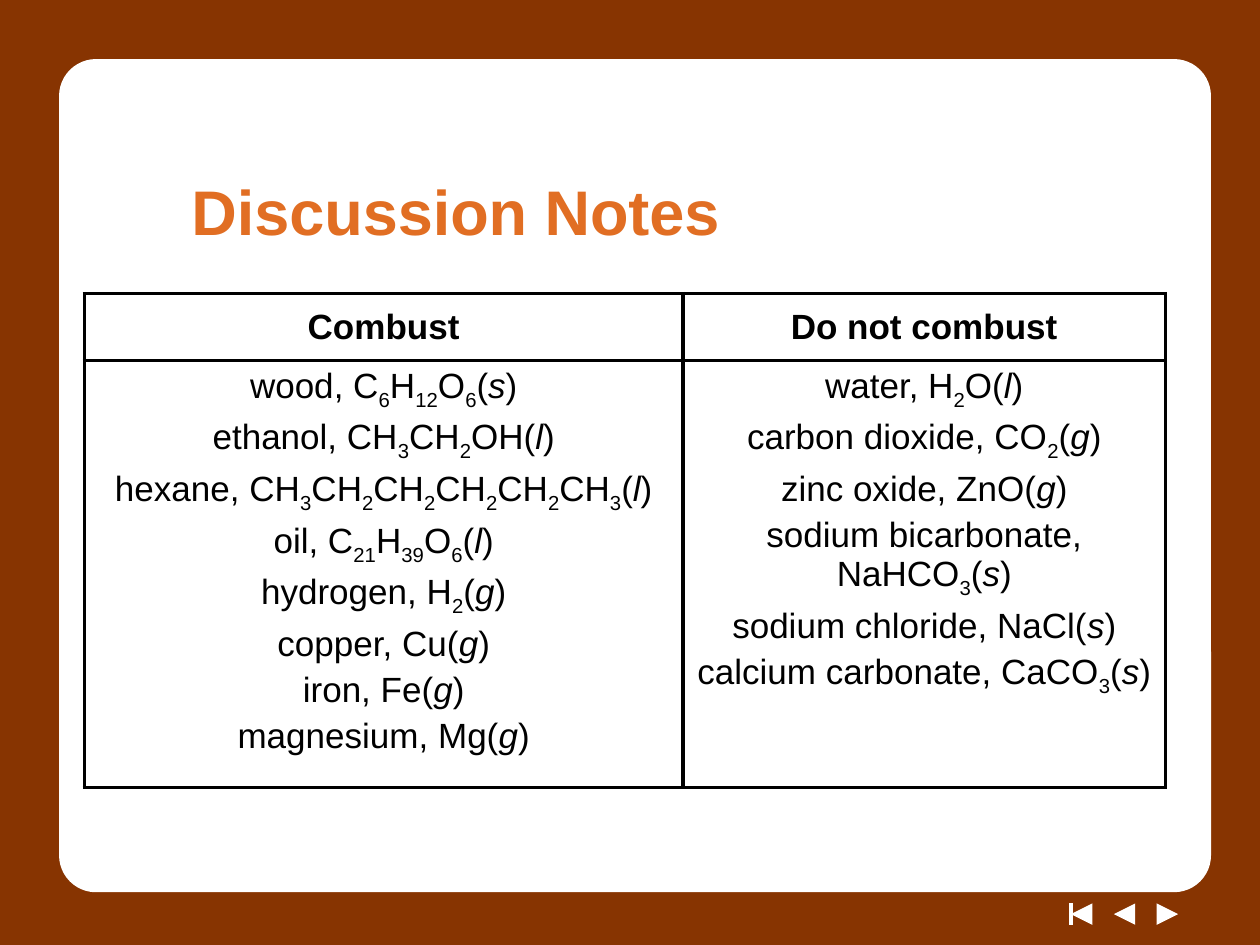
from itertools import groupby

from lxml import etree
from pptx import Presentation
from pptx import util as u
from pptx.dml.color import RGBColor
from pptx.enum import shapes, text
from pptx.oxml.ns import qn

W, H = 10, 7.5
FRAME, WHITE, BLACK, ORANGE = "873401", "FFFFFF", "000000", "E16E23"
COMBUST = [
    ("wood", "C6H12O6(s)"),
    ("ethanol", "CH3CH2OH(l)"),
    ("hexane", "CH3CH2CH2CH2CH2CH3(l)"),
    ("oil", "C21H39O6(l)"),
    ("hydrogen", "H2(g)"),
    ("copper", "Cu(g)"),
    ("iron", "Fe(g)"),
    ("magnesium", "Mg(g)"),
]
DO_NOT_COMBUST = [
    ("water", "H2O(l)"),
    ("carbon dioxide", "CO2(g)"),
    ("zinc oxide", "ZnO(g)"),
    ("sodium bicarbonate", "NaHCO3(s)"),
    ("sodium chloride", "NaCl(s)"),
    ("calcium carbonate", "CaCO3(s)"),
]


def rgb(value):
    return RGBColor.from_string(value)


def inches(*lengths):
    return [u.Inches(n) for n in lengths]


def add_filled(s, kind, box, color, adj=None, rotation=0, line=0):
    sp = s.shapes.add_shape(kind, *inches(*box))
    sp.shadow.inherit = False
    sp.fill.solid()
    sp.fill.fore_color.rgb = rgb(color)
    if line:
        sp.line.color.rgb = rgb(color)
        sp.line.width = u.Pt(line)
    else:
        sp.line.fill.background()
    if adj is not None:
        sp.adjustments[0] = adj
    sp.rotation = rotation


def add_run(p, words, size, color=BLACK, bold=False):
    r = p.add_run()
    r.text = words
    f = r.font
    f.name, f.size, f.bold = "Arial", u.Pt(size), bold
    f.color.rgb = rgb(color)
    return r


def add_background(s):
    kinds = shapes.MSO_SHAPE
    add_filled(s, kinds.RECTANGLE, (0, 0, W, H), FRAME)
    add_navigation(s, 8.5, 7.17, 0.17)
    add_filled(s, kinds.ROUNDED_RECTANGLE, (0.5, 0.5, 9.08, 6.55), WHITE, 0.04, line=4.5)


def add_navigation(s, left, top, size):
    """Draw the first, back and next arrows in a row."""
    for i, rotation in enumerate((270, 270, 90)):
        box = (left + i * 2 * size, top, size, size)
        add_filled(s, shapes.MSO_SHAPE.ISOSCELES_TRIANGLE, box, WHITE, 0.5, rotation)
    bar = s.shapes.add_connector(shapes.MSO_CONNECTOR.STRAIGHT,
                                 *inches(left, top, left, top + size))
    bar.line.color.rgb = rgb(WHITE)
    bar.line.width = u.Pt(2)
    etree.SubElement(bar._element.spPr, qn("a:effectLst"))


def add_title(s, box, words):
    tf = s.shapes.add_textbox(*inches(*box)).text_frame
    tf.word_wrap = True
    tf.vertical_anchor = text.MSO_ANCHOR.MIDDLE
    add_run(tf.paragraphs[0], words, 36, ORANGE, True)


def add_formula(p, formula):
    """Lower the digits and slant the state letter in brackets."""
    state = formula.index("(") + 1

    def style(item):
        i, char = item
        return char.isdigit(), i == state

    for (lowered, slanted), items in groupby(enumerate(formula), style):
        r = add_run(p, "".join(char for _, char in items), 20)
        r.font.italic = slanted
        if lowered:
            r.font._element.set("baseline", "-25000")


def set_borders(cell, color, width):
    tcPr = cell._tc.get_or_add_tcPr()
    for i, side in enumerate(("lnL", "lnR", "lnT", "lnB")):
        ln = etree.Element(qn(f"a:{side}"), w=str(u.Pt(width)))
        fill = etree.SubElement(ln, qn("a:solidFill"))
        etree.SubElement(fill, qn("a:srgbClr"), val=color)
        tcPr.insert(i, ln)


def format_paragraph(p):
    p.alignment = text.PP_ALIGN.CENTER
    p.space_before = u.Pt(4)


def add_substances(s, box, widths, heights, columns):
    table = s.shapes.add_table(len(heights), len(widths), *inches(*box)).table
    table.first_row = table.horz_banding = False
    for row, height in zip(table.rows, heights):
        row.height = u.Inches(height)
    for i, (width, (heading, substances)) in enumerate(zip(widths, columns)):
        table.columns[i].width = u.Inches(width)
        head, body = table.cell(0, i), table.cell(1, i)
        for cell in (head, body):
            cell.fill.background()
            set_borders(cell, BLACK, 2.25)
        head.vertical_anchor = text.MSO_ANCHOR.MIDDLE
        p = head.text_frame.paragraphs[0]
        format_paragraph(p)
        add_run(p, heading, 20, bold=True)
        tf = body.text_frame
        for j, (name, formula) in enumerate(substances):
            p = tf.add_paragraph() if j else tf.paragraphs[0]
            format_paragraph(p)
            add_run(p, f"{name}, ", 20)
            add_formula(p, formula)


def main():
    prs = Presentation()
    prs.slide_width, prs.slide_height = inches(W, H)
    s = prs.slides.add_slide(prs.slide_layouts[6])
    add_background(s)
    add_title(s, (1.42, 1.17, 8.08, 1), "Discussion Notes")
    add_substances(s, (0.67, 2.33, 8.58, 3.92), (4.75, 3.83), (0.53, 3.39),
                   [("Combust", COMBUST), ("Do not combust", DO_NOT_COMBUST)])
    prs.save("out.pptx")


if __name__ == "__main__":
    main()
